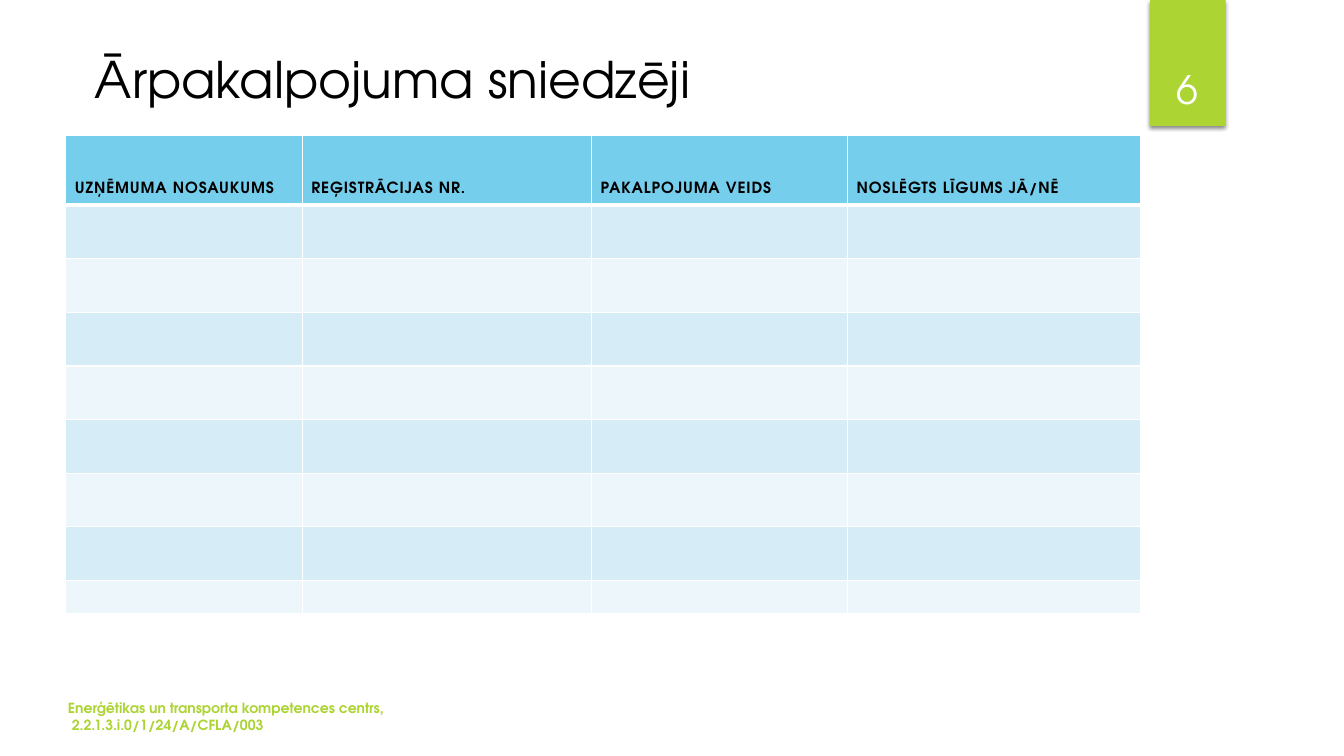
from lxml.etree import SubElement
from pptx import Presentation
from pptx.dml.color import RGBColor
from pptx.enum.shapes import MSO_SHAPE
from pptx.enum.text import MSO_ANCHOR, PP_ALIGN
from pptx.oxml import parse_xml
from pptx.oxml.ns import nsdecls, qn
from pptx.util import Pt

FONT = "TeX Gyre Adventor"
GREEN = "ACD433"


def color(value):
    return RGBColor.from_string(value)


def write(frame, text, size, value, anchor, align=PP_ALIGN.LEFT, bold=False):
    frame.word_wrap = True
    frame.vertical_anchor = anchor
    frame.text = text
    for para in frame.paragraphs:
        para.alignment = align
        for span in para.runs:
            span.font.name = FONT
            span.font.size = Pt(size)
            span.font.bold = bold
            span.font.color.rgb = color(value)


deck = Presentation()
deck.slide_width = Pt(960)
deck.slide_height = Pt(540)
page = deck.slides.add_slide(deck.slide_layouts[5])

title = page.shapes.title
title.left, title.top, title.width, title.height = Pt(60.5), Pt(28), Pt(690), Pt(55.5)
write(title.text_frame, "Ārpakalpojuma sniedzēji", 36, "000000", MSO_ANCHOR.MIDDLE)

number_tab = page.shapes.add_shape(MSO_SHAPE.RECTANGLE, Pt(821.5), Pt(0), Pt(54), Pt(90))
number_tab.fill.solid()
number_tab.fill.fore_color.rgb = color(GREEN)
number_tab.line.fill.background()
number_tab.shadow.inherit = False
effects = number_tab.element.spPr.find(qn("a:effectLst"))
effects.append(parse_xml(
    f'<a:outerShdw {nsdecls("a")} blurRad="{Pt(3)}" dist="{Pt(2)}" dir="5400000" rotWithShape="0">'
    '<a:srgbClr val="000000"><a:alpha val="45000"/></a:srgbClr></a:outerShdw>'))

number_box = page.shapes.add_textbox(Pt(815), Pt(23), Pt(66.5), Pt(60.5))
write(number_box.text_frame, "6", 28, "FFFFFF", MSO_ANCHOR.BOTTOM, PP_ALIGN.CENTER)

footer = page.shapes.add_textbox(Pt(41.5), Pt(503.5), Pt(304), Pt(23.5))
write(footer.text_frame,
      "Enerģētikas un transporta kompetences centrs,\n 2.2.1.3.i.0/1/24/A/CFLA/003",
      10, GREEN, MSO_ANCHOR.BOTTOM, bold=True)

headings = ["UZŅĒMUMA NOSAUKUMS", "REĢISTRĀCIJAS NR.", "PAKALPOJUMA VEIDS", "NOSLĒGTS LĪGUMS JĀ/NĒ"]
column_widths = [169, 206.5, 183, 209.5]
row_heights = [49.7] + [38.3] * 7 + [23.5]
frame = page.shapes.add_table(len(row_heights), len(headings), Pt(47), Pt(96.8),
                              Pt(sum(column_widths)), Pt(sum(row_heights)))
providers = frame.table
for column, width in zip(providers.columns, column_widths):
    column.width = Pt(width)

for row_index, height in enumerate(row_heights):
    providers.rows[row_index].height = Pt(height)
    is_header = row_index == 0
    for column_index, heading in enumerate(headings):
        cell = providers.cell(row_index, column_index)
        if is_header:
            write(cell.text_frame, heading, 11, "000000", MSO_ANCHOR.BOTTOM, bold=True)
            cell.vertical_anchor = MSO_ANCHOR.BOTTOM
            cell.margin_left = cell.margin_right = Pt(6.5)
            cell.margin_top = cell.margin_bottom = Pt(6.5)
            span = cell.text_frame.paragraphs[0].runs[0]
            span._r.get_or_add_rPr().set("spc", "60")
        else:
            cell.margin_top = cell.margin_bottom = Pt(0)
            SubElement(cell.text_frame.paragraphs[0]._p, qn("a:endParaRPr"), sz="1100")
        properties = cell._tc.get_or_add_tcPr()
        for side in ("lnL", "lnR", "lnT", "lnB"):
            weight = 3 if is_header and side == "lnB" else 1
            line = SubElement(properties, qn(f"a:{side}"), w=str(Pt(weight)))
            SubElement(SubElement(line, qn("a:solidFill")), qn("a:srgbClr"), val="FFFFFF")
        cell.fill.solid()
        band = "D6EDF8" if row_index % 2 else "ECF6FB"
        cell.fill.fore_color.rgb = color("75CEEC" if is_header else band)

deck.save("out.pptx")
